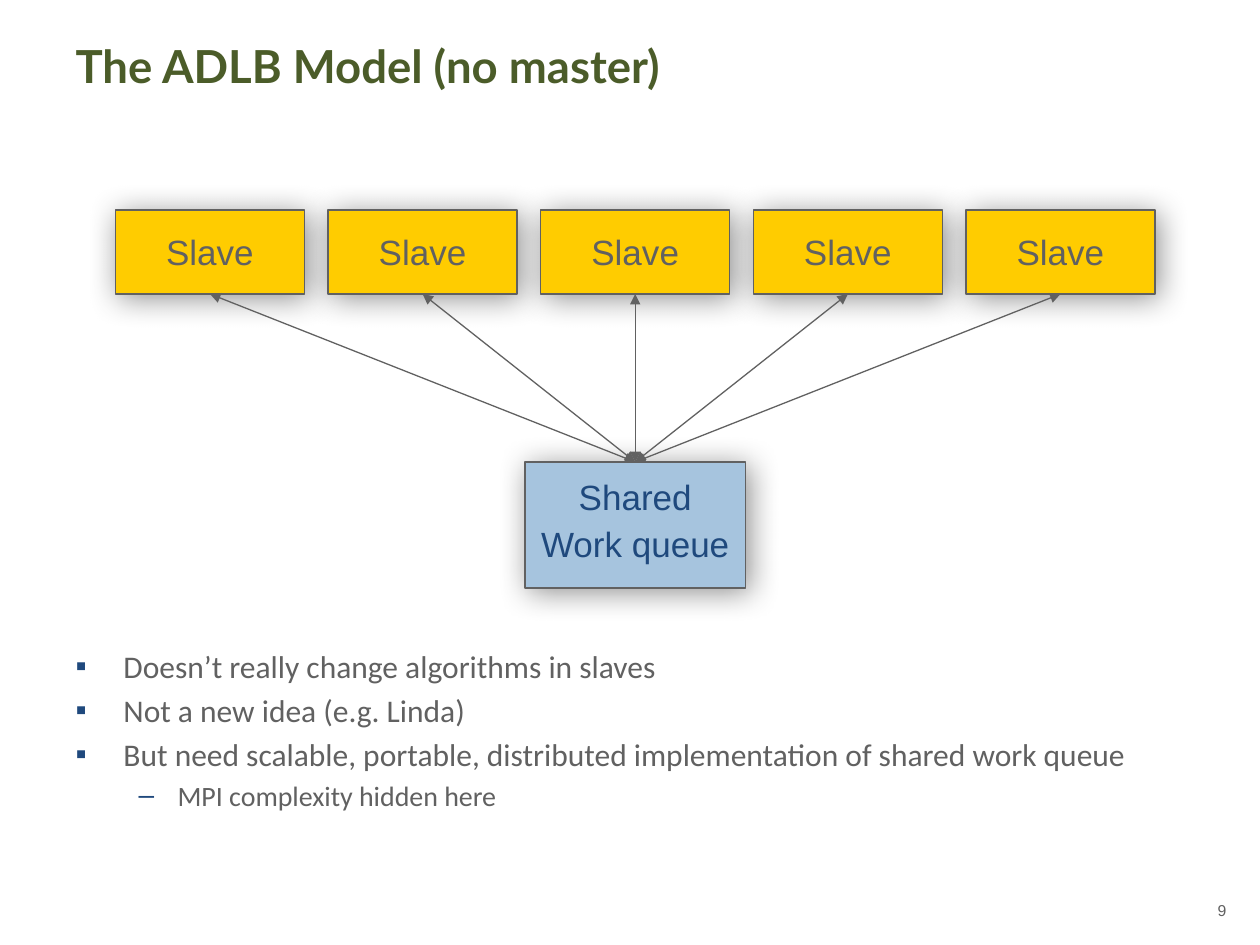
from lxml import etree
from pptx import Presentation
from pptx.dml.color import RGBColor
from pptx.enum.shapes import MSO_CONNECTOR, MSO_SHAPE
from pptx.enum.text import MSO_ANCHOR, MSO_AUTO_SIZE, PP_ALIGN
from pptx.oxml.ns import qn
from pptx.util import Inches, Pt

RECTANGLE = MSO_SHAPE.RECTANGLE
STRAIGHT = MSO_CONNECTOR.STRAIGHT
TOP, MIDDLE = MSO_ANCHOR.TOP, MSO_ANCHOR.MIDDLE
LEFT, CENTER, RIGHT = PP_ALIGN.LEFT, PP_ALIGN.CENTER, PP_ALIGN.RIGHT
NO_FIT = MSO_AUTO_SIZE.NONE

GREEN = RGBColor(0x4B, 0x5C, 0x29)
GRAY = RGBColor(0x61, 0x61, 0x61)
YELLOW = RGBColor(0xFF, 0xCC, 0x00)
LIGHT_BLUE = RGBColor(0xA6, 0xC4, 0xDE)
NAVY = RGBColor(0x1F, 0x49, 0x7D)

CELL = Inches(1) / 12
SLAVE_COUNT = 5
SLAVE_PITCH = 20.25
SIDE_TOP, SIDE_BOTTOM = 0, 2

TITLE_FONT = {"name": "Lato", "size": Pt(26), "bold": True}
BULLET_FONTS = [{"name": "Calibri", "size": Pt(18)}, {"name": "Calibri", "size": Pt(16)}]
BULLET_STYLES = [("▪", 0.38, -0.38), ("–", 0.81, -0.31)]
BOX_FONT = {"name": "Arial", "size": Pt(20)}
NUMBER_FONT = {"name": "Arial", "size": Pt(9)}

BULLETS = [
    ("Doesn’t really change algorithms in slaves", 0),
    ("Not a new idea (e.g. Linda)", 0),
    ("But need scalable, portable, distributed implementation of shared work queue", 0),
    ("MPI complexity hidden here", 1),
]


def grid(*cells):
    """Turn columns and rows of the grid into slide lengths."""
    return [round(cell * CELL) for cell in cells]


def add_child(parent, tag, **attributes):
    """Append a drawing element with the given attributes."""
    return etree.SubElement(parent, qn(tag), {key: str(value) for key, value in attributes.items()})


def set_font(para, values, color):
    """Apply a dict of font values and a colour to a paragraph's spans."""
    for span in para.runs:
        for name, value in values.items():
            setattr(span.font, name, value)
        span.font.color.rgb = color


def place(holder, cells):
    """Move a text holder onto the grid and anchor its text at the top."""
    holder.left, holder.top, holder.width, holder.height = grid(*cells)
    frame = holder.text_frame
    for name, value in {"word_wrap": True, "auto_size": NO_FIT, "vertical_anchor": TOP}.items():
        setattr(frame, name, value)
    return frame


def write_line(frame, text, values, color, align):
    """Write a single formatted line into a text frame."""
    frame.text = text
    para = frame.paragraphs[0]
    para.alignment = align
    set_font(para, values, color)


def add_bullet(para, level):
    """Give a paragraph its hanging indent and coloured bullet."""
    mark, margin, indent = BULLET_STYLES[level]
    para.level = level
    properties = para._p.get_or_add_pPr()
    properties.set("marL", str(Inches(margin)))
    properties.set("indent", str(Inches(indent)))
    add_child(add_child(properties, "a:buClr"), "a:srgbClr", val=NAVY)
    add_child(properties, "a:buFont", typeface="Arial")
    add_child(properties, "a:buChar", char=mark)


def fill_bullets(frame):
    """Write the bulleted list into the body frame."""
    frame.text = "\n".join(text for text, _ in BULLETS)
    for index, (para, (_, level)) in enumerate(zip(frame.paragraphs, BULLETS)):
        values = BULLET_FONTS[level]
        add_bullet(para, level)
        para.space_before = values["size"] // 5 if index else Pt(0)
        set_font(para, values, GRAY)


def add_shadow(shape):
    """Give a shape a soft black shadow."""
    shape.shadow.inherit = False
    effects = shape._element.spPr.find(qn("a:effectLst"))
    shadow = add_child(effects, "a:outerShdw", blurRad=Pt(18), dist=Pt(3),
                       dir=45 * 60000, algn="ctr", rotWithShape=0)
    color = add_child(shadow, "a:srgbClr", val="000000")
    add_child(color, "a:alpha", val=43000)


def add_box(page, text, cells, fill, color, spacing=1.0):
    """Add a shadowed rectangle with centred lines of text."""
    box = page.shapes.add_shape(RECTANGLE, *grid(*cells))
    box.fill.solid()
    box.fill.fore_color.rgb = fill
    box.line.color.rgb = GRAY
    box.line.width = Pt(0.75)
    add_shadow(box)
    frame = box.text_frame
    frame.word_wrap = False
    frame.vertical_anchor = MIDDLE
    frame.text = text
    for index, para in enumerate(frame.paragraphs):
        para.alignment = CENTER
        para.line_spacing = spacing
        para.space_before = Pt(10 if index else 0)
        set_font(para, BOX_FONT, color)
    return box


def add_arrow(page, slave, queue):
    """Join a slave to the queue with a two-headed arrow."""
    arrow = page.shapes.add_connector(STRAIGHT, 0, 0, 0, 0)
    arrow.begin_connect(slave, SIDE_BOTTOM)
    arrow.end_connect(queue, SIDE_TOP)
    arrow.line.color.rgb = GRAY
    arrow.line.width = Pt(0.75)
    line = arrow.line._get_or_add_ln()
    for end in ("a:headEnd", "a:tailEnd"):
        add_child(line, end, type="triangle")
    add_child(arrow._element.spPr, "a:effectLst")


def main():
    """Build the slide and save the deck."""
    deck = Presentation()
    deck.slide_width, deck.slide_height = Inches(10), Inches(7.5)
    page = deck.slides.add_slide(deck.slide_layouts[1])

    title = place(page.shapes.title, (6, 3, 108, 5.25))
    write_line(title, "The ADLB Model (no master)", TITLE_FONT, GREEN, LEFT)
    fill_bullets(place(page.placeholders[1], (6, 61, 108, 24)))
    number = place(page.shapes.add_textbox(0, 0, 0, 0), (113, 85.2, 5, 4.8))
    write_line(number, "9", NUMBER_FONT, GRAY, RIGHT)

    slaves = [add_box(page, "Slave", (11 + SLAVE_PITCH * column, 20, 18, 8), YELLOW, GRAY)
              for column in range(SLAVE_COUNT)]
    queue = add_box(page, "Shared\nWork queue", (50, 44, 21, 12), LIGHT_BLUE, NAVY, 0.7)
    for slave in slaves:
        add_arrow(page, slave, queue)

    deck.save("out.pptx")


if __name__ == "__main__":
    main()
